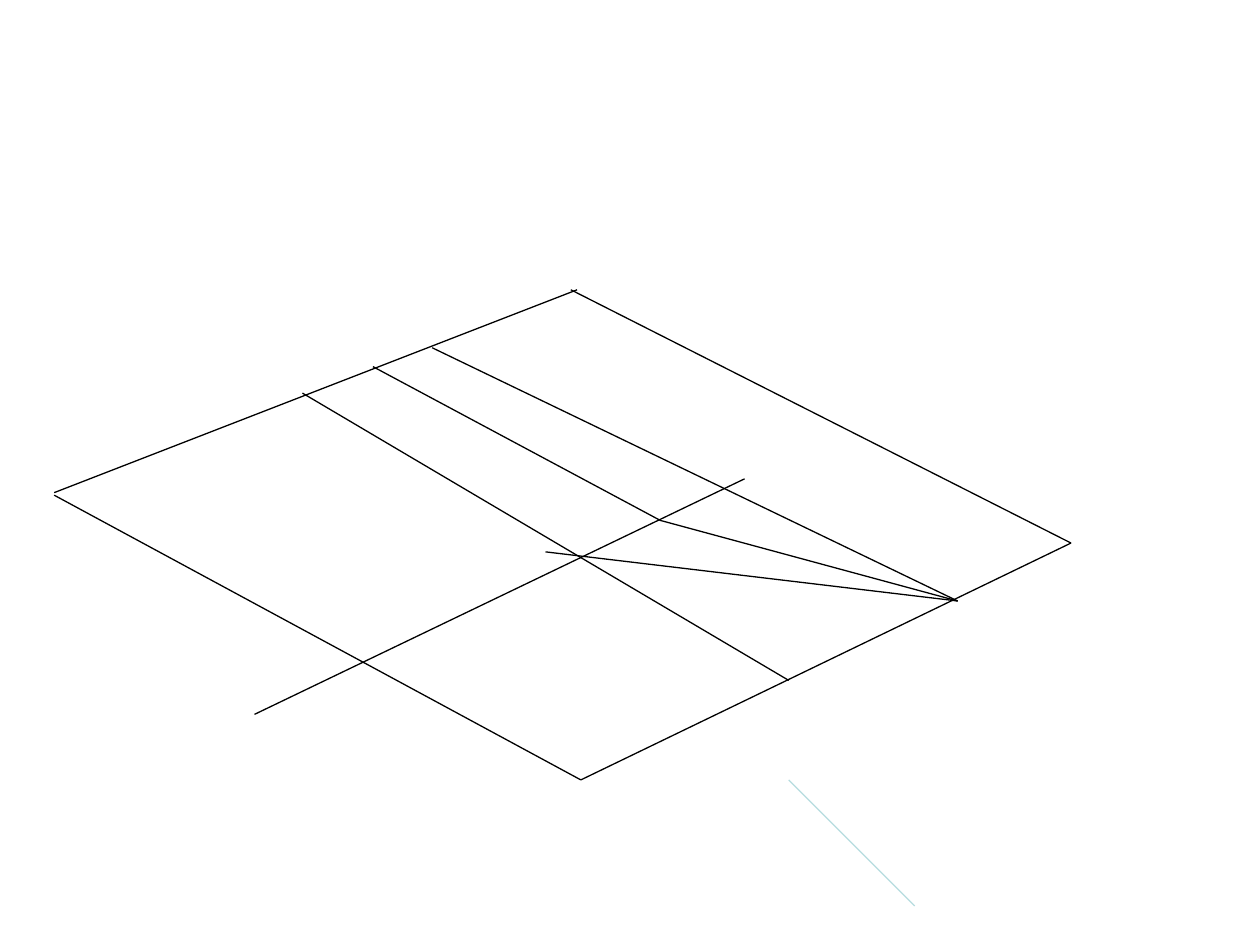
from collections import namedtuple

from lxml.etree import SubElement
from pptx import Presentation
from pptx.dml.color import RGBColor
from pptx.enum.shapes import MSO_CONNECTOR as Connector
from pptx.oxml.ns import qn
from pptx.util import Inches, Pt

COLUMNS, ROWS = 1000, 750
UNIT = Inches(10) / COLUMNS
COLORS = {"plane": "000000", "accent": "B6DCDF"}

Box = namedtuple("Box", "left top width height")


def draw_line(page, box, start, end, color):
    ends = [
        round((origin + offset) * UNIT)
        for point in (start, end)
        for origin, offset in zip((box.left, box.top), point)
    ]
    line = page.shapes.add_connector(Connector.STRAIGHT, *ends)
    line.line.color.rgb = RGBColor.from_string(COLORS[color])
    line.line.width = Pt(0.75)
    SubElement(line.element.spPr, qn("a:effectLst"))


def draw_plane(page, box):
    near = (418, box.height)
    right = (box.width, 201)
    bend = (481, 183)
    meeting = (717, 247)
    outline = [
        (near, (0, 163)),
        ((0, 161), (415, 0)),
        (right, (410, 0)),
        (near, right),
    ]
    crossings = [
        ((583, 310), (197, 82)),
        ((253, 61), bend),
        ((300, 46), meeting),
        (bend, meeting),
        ((159, 337), (548, 150)),
        (meeting, (390, 208)),
    ]
    for start, end in outline + crossings:
        draw_line(page, box, start, end, "plane")


def draw_accent(page, box):
    draw_line(page, box, (0, 0), (box.width, box.height), "accent")


def main():
    deck = Presentation()
    deck.slide_width = round(COLUMNS * UNIT)
    deck.slide_height = round(ROWS * UNIT)
    page = deck.slides.add_slide(deck.slide_layouts[6])
    draw_plane(page, Box(43, 230, 807, 389))
    draw_accent(page, Box(626, 619, 100, 100))
    deck.save("out.pptx")


if __name__ == "__main__":
    main()
